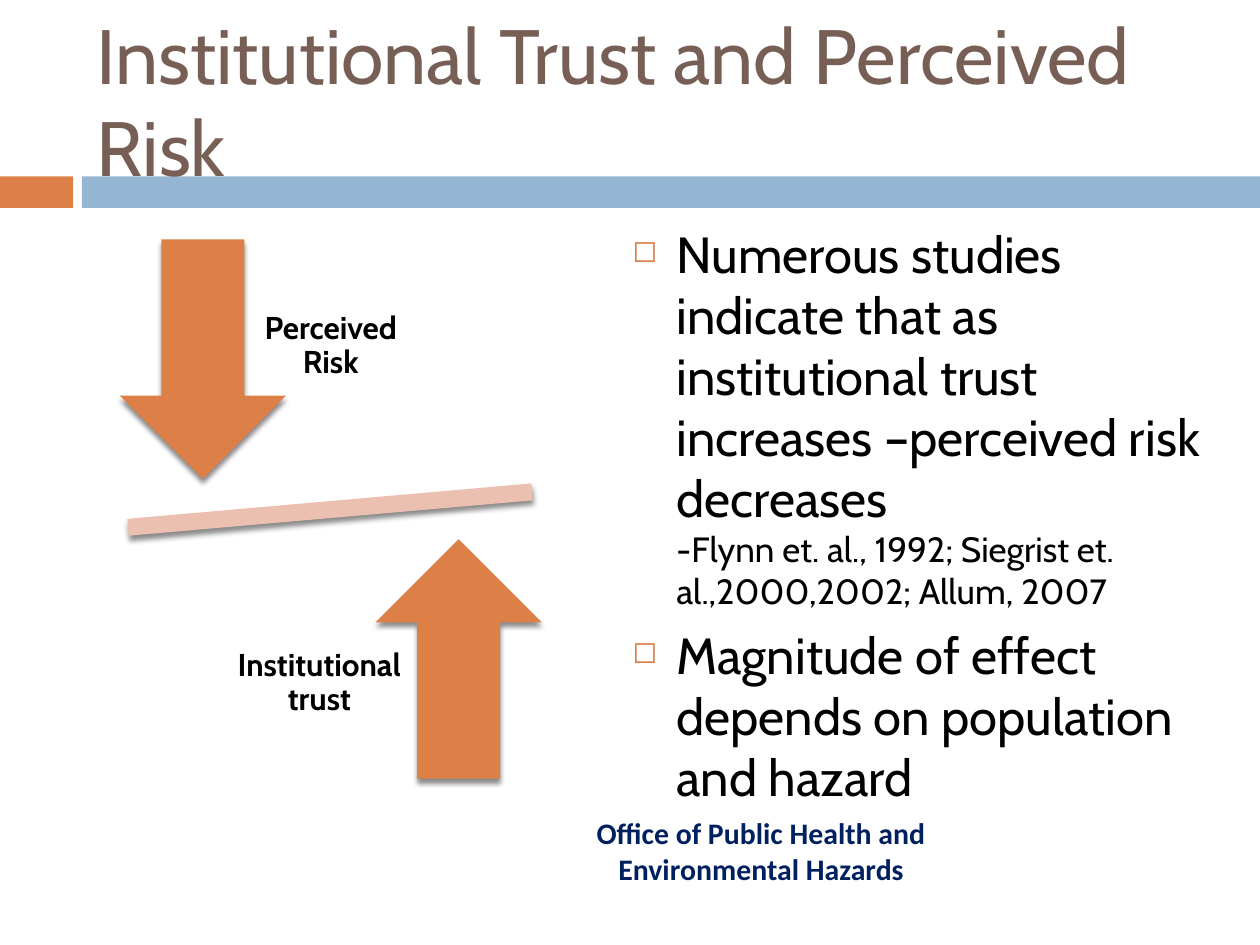
import pptx
import pptx.dml.color
import pptx.enum.shapes
import pptx.enum.text
import pptx.oxml
import pptx.oxml.ns
import pptx.util

Inches = pptx.util.Inches
Pt = pptx.util.Pt
RGB = pptx.dml.color.RGBColor.from_string
SHAPE = pptx.enum.shapes.MSO_SHAPE
ALIGN = pptx.enum.text.PP_ALIGN
ANCHOR = pptx.enum.text.MSO_ANCHOR
NS = pptx.oxml.ns.nsdecls("a")

COLORS = {
    "orange": "DD8047",
    "blue": "94B6D2",
    "pink": "EBC0B1",
    "brown": "775F55",
    "navy": "002060",
    "black": "000000",
}
SHADOW = (
    f'<a:effectLst {NS}><a:outerShdw blurRad="{Pt(3)}" dist="{Pt(2.4)}" dir="5400000" '
    f'rotWithShape="0"><a:srgbClr val="{COLORS["black"]}"><a:alpha val="45000"/>'
    '</a:srgbClr></a:outerShdw></a:effectLst>'
)
BULLET = (
    f'<a:buClr {NS}><a:srgbClr val="{COLORS["orange"]}"/></a:buClr>',
    f'<a:buSzPct {NS} val="60000"/>',
    f'<a:buChar {NS} char="◻"/>',
)


def add_block(preset, box, color):
    block = slide.shapes.add_shape(preset, *map(Inches, box))
    block.shadow.inherit = False
    block.fill.solid()
    block.fill.fore_color.rgb = RGB(COLORS[color])
    block.line.fill.background()
    return block


def add_text(text, box, size, color, font="Cabin", bold=False, align=ALIGN.LEFT,
             anchor=ANCHOR.TOP, spacing=None):
    frame = slide.shapes.add_textbox(*map(Inches, box)).text_frame
    frame.word_wrap = True
    frame.vertical_anchor = anchor
    paragraph = frame.paragraphs[0]
    paragraph.text = text
    paragraph.alignment = align
    paragraph.line_spacing = spacing
    paragraph.font.name = font
    paragraph.font.size = Pt(size)
    paragraph.font.bold = bold
    paragraph.font.color.rgb = RGB(COLORS[color])
    return frame


prs = pptx.Presentation()
prs.slide_width = Inches(10)
prs.slide_height = Inches(7.5)
slide = prs.slides.add_slide(prs.slide_layouts[6])

# Divider band, footer and title
add_block(SHAPE.RECTANGLE, (0, 1.4, 0.58, 0.25), "orange")
add_block(SHAPE.RECTANGLE, (0.65, 1.4, 9.35, 0.25), "blue")
add_text("Office of Public Health and Environmental Hazards", (4.58, 6.42, 2.92, 0.67),
         17, "navy", font="Calibri", bold=True, align=ALIGN.CENTER)
add_text("Institutional Trust and Perceived Risk", (0.67, 0.25, 8.92, 1.08),
         44, "brown", anchor=ANCHOR.MIDDLE)

# Findings
findings = [
    [("Numerous studies indicate that as institutional trust increases "
      "–perceived risk decreases ", 29),
     ("-Flynn et. al., 1992; Siegrist et. al.,2000,2002; Allum, 2007", 20)],
    [("Magnitude of effect depends on population and hazard", 29)],
]
body = slide.shapes.add_textbox(Inches(4.92), Inches(1.72), Inches(4.75), Inches(4.95)).text_frame
body.word_wrap = True
for index, parts in enumerate(findings):
    finding = body.paragraphs[0] if index == 0 else body.add_paragraph()
    properties = finding._p.get_or_add_pPr()
    properties.set("marL", str(Inches(0.35)))
    properties.set("indent", str(-Inches(0.35)))
    for element in BULLET:
        properties.append(pptx.oxml.parse_xml(element))
    if index:
        finding.space_before = Pt(7)
    finding.font.name = "Cabin"
    finding.font.color.rgb = RGB(COLORS["black"])
    for position, (text, size) in enumerate(parts):
        if position:
            finding.add_line_break()
        run = finding.add_run()
        run.text = text
        run.font.size = Pt(size)

# Balance of risk and trust
beam = add_block(SHAPE.MATH_MINUS, (0.43, 3.76, 4.38, 0.57), "pink")
beam.rotation = 355
risk_arrow = add_block(SHAPE.DOWN_ARROW, (0.95, 1.9, 1.32, 1.9), "orange")
trust_arrow = add_block(SHAPE.UP_ARROW, (2.98, 4.28, 1.32, 1.9), "orange")
for part in (beam, risk_arrow, trust_arrow):
    properties = part._element.spPr
    properties.replace(properties.find(pptx.oxml.ns.qn("a:effectLst")),
                       pptx.oxml.parse_xml(SHADOW))

for label, left, top in (("Perceived Risk", 1.75, 1.75), ("Institutional trust", 1.66, 4.42)):
    frame = add_text(label, (left, top, 1.75, 2), 18, "black", bold=True,
                     align=ALIGN.CENTER, anchor=ANCHOR.MIDDLE, spacing=0.9)
    frame.margin_left = frame.margin_right = Inches(0.14)
    frame.margin_top = frame.margin_bottom = Inches(0.14)

prs.save("out.pptx")
